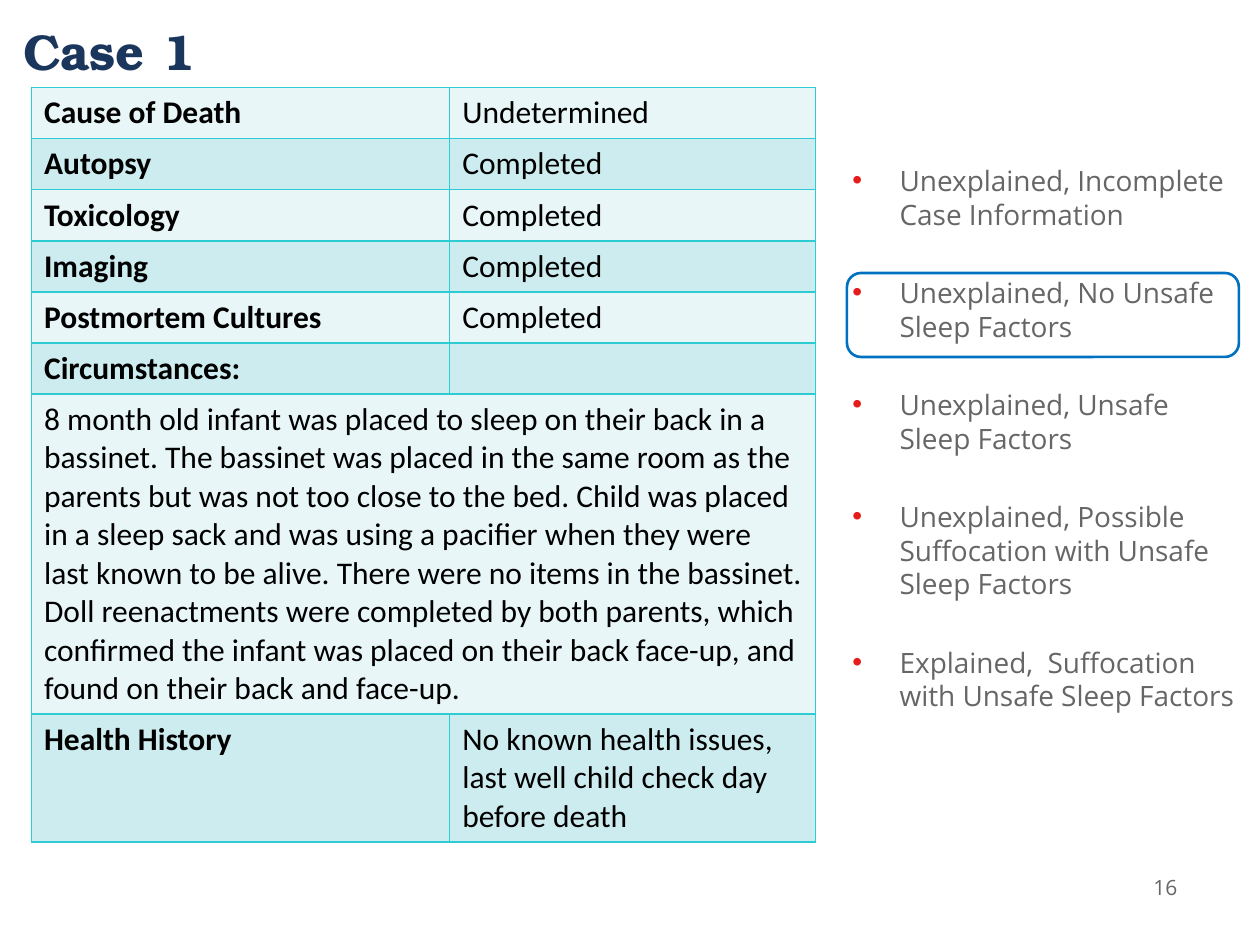
from lxml import etree
from pptx import Presentation
from pptx.dml.color import RGBColor
from pptx.enum.shapes import MSO_SHAPE
from pptx.enum.text import MSO_ANCHOR, PP_ALIGN
from pptx.oxml.ns import qn
from pptx.util import Pt

ROUND_RECT = MSO_SHAPE.ROUNDED_RECTANGLE
MIDDLE = MSO_ANCHOR.MIDDLE
LEFT, CENTER = PP_ALIGN.LEFT, PP_ALIGN.CENTER

TITLE_FONT = {"name": "TeX Gyre Bonum", "size": Pt(28.8), "bold": True}
LIST_FONT = {"name": "Open Sans", "size": Pt(16)}
NUMBER_FONT = {"name": "Open Sans", "size": Pt(12)}
CELL_FONT = {"name": "Calibri", "size": Pt(18)}
BANDS = ["E8F6F7", "CDECEF"]

CASE_ROWS = [
    ("Cause of Death", "Undetermined"),
    ("Autopsy", "Completed"),
    ("Toxicology", "Completed"),
    ("Imaging", "Completed"),
    ("Postmortem Cultures", "Completed"),
    ("Circumstances:", ""),
    ("8 month old infant was placed to sleep on their back in a bassinet. "
     "The bassinet was placed in the same room as the parents but was not too "
     "close to the bed. Child was placed in a sleep sack and was using a "
     "pacifier when they were last known to be alive. There were no items in "
     "the bassinet. Doll reenactments were completed by both parents, which "
     "confirmed the infant was placed on their back face-up, and found on "
     "their back and face-up.",),
    ("Health History",
     "No known health issues, last well child check day before death"),
]
ROW_HEIGHTS = [29.2] * 6 + [182.9, 73]
CATEGORIES = [
    "Unexplained, Incomplete Case Information",
    "Unexplained, No Unsafe Sleep Factors",
    "Unexplained, Unsafe Sleep Factors",
    "Unexplained, Possible Suffocation with Unsafe Sleep Factors",
    "Explained,  Suffocation with Unsafe Sleep Factors",
]


def rgb(value):
    return RGBColor.from_string(value)


def set_font(font, values, color):
    for name, value in values.items():
        setattr(font, name, value)
    font.color.rgb = rgb(color)


def points(box):
    return [Pt(v) for v in box]


def add_title(s, box, text):
    sp = s.shapes.title
    sp.left, sp.top, sp.width, sp.height = points(box)
    tf = sp.text_frame
    tf.text = text
    tf.vertical_anchor = MIDDLE
    p = tf.paragraphs[0]
    p.alignment = LEFT
    set_font(p.runs[0].font, TITLE_FONT, "1B365D")


def add_borders(cell, color, width):
    tc_pr = cell._tc.get_or_add_tcPr()
    for i, side in enumerate(("lnL", "lnR", "lnT", "lnB")):
        ln = etree.Element(qn(f"a:{side}"), w=str(Pt(width)))
        fill = etree.SubElement(ln, qn("a:solidFill"))
        etree.SubElement(fill, qn("a:srgbClr"), val=color)
        tc_pr.insert(i, ln)


def add_case_table(s, box, rows, heights, label_width):
    table = s.shapes.add_table(len(rows), 2, *points(box)).table
    table.first_row = table.horz_banding = False
    table.columns[0].width = Pt(label_width)
    table.columns[1].width = Pt(box[2] - label_width)
    for i, (texts, height) in enumerate(zip(rows, heights)):
        table.rows[i].height = Pt(height)
        for j in range(2):
            cell = table.cell(i, j)
            cell.fill.solid()
            cell.fill.fore_color.rgb = rgb(BANDS[i % 2])
            add_borders(cell, "2DCCD3", 1)
            p = cell.text_frame.paragraphs[0]
            set_font(p.font, CELL_FONT, "000000")
            if j < len(texts) and texts[j]:
                r = p.add_run()
                r.text = texts[j]
                set_font(r.font, CELL_FONT, "000000")
                r.font.bold = j == 0 and len(texts) == 2
        if len(texts) == 1:
            table.cell(i, 0).merge(table.cell(i, 1))


def add_bullet(p, color, indent):
    p_pr = p._p.get_or_add_pPr()
    p_pr.set("marL", str(Pt(indent)))
    p_pr.set("indent", str(-Pt(indent)))
    bu_clr = etree.SubElement(p_pr, qn("a:buClr"))
    etree.SubElement(bu_clr, qn("a:srgbClr"), val=color)
    etree.SubElement(p_pr, qn("a:buFont"), typeface="Arial")
    etree.SubElement(p_pr, qn("a:buChar"), char="•")


def add_category_list(s, box, items):
    tf = s.shapes.add_textbox(*points(box)).text_frame
    tf.word_wrap = True
    for i, item in enumerate(items):
        p = tf.paragraphs[0] if i == 0 else tf.add_paragraph()
        add_bullet(p, "E71B1B", 27)
        p.line_spacing = Pt(19.2)
        p.space_before = Pt(25.6 if i else 0)
        r = p.add_run()
        r.text = item
        set_font(r.font, LIST_FONT, "666666")


def add_highlight(s, box):
    sp = s.shapes.add_shape(ROUND_RECT, *points(box))
    sp.shadow.inherit = False
    sp.fill.background()
    sp.line.color.rgb = rgb("0070C0")
    sp.line.width = Pt(1.5)


def add_page_number(s, box, text):
    tf = s.shapes.add_textbox(*points(box)).text_frame
    tf.word_wrap = True
    tf.vertical_anchor = MIDDLE
    p = tf.paragraphs[0]
    p.alignment = CENTER
    r = p.add_run()
    r.text = text
    set_font(r.font, NUMBER_FONT, "666666")


def main():
    prs = Presentation()
    prs.slide_width, prs.slide_height = Pt(720), Pt(540)
    s = prs.slides.add_slide(prs.slide_layouts[5])
    add_page_number(s, (648, 492, 36, 30), "16")
    add_title(s, (6, 8, 648, 42), "Case 1")
    add_category_list(s, (480, 90, 238, 330), CATEGORIES)
    add_highlight(s, (484, 156, 224, 48))
    add_case_table(s, (18, 50, 448, sum(ROW_HEIGHTS)), CASE_ROWS,
                   ROW_HEIGHTS, 239)
    prs.save("out.pptx")


if __name__ == "__main__":
    main()
